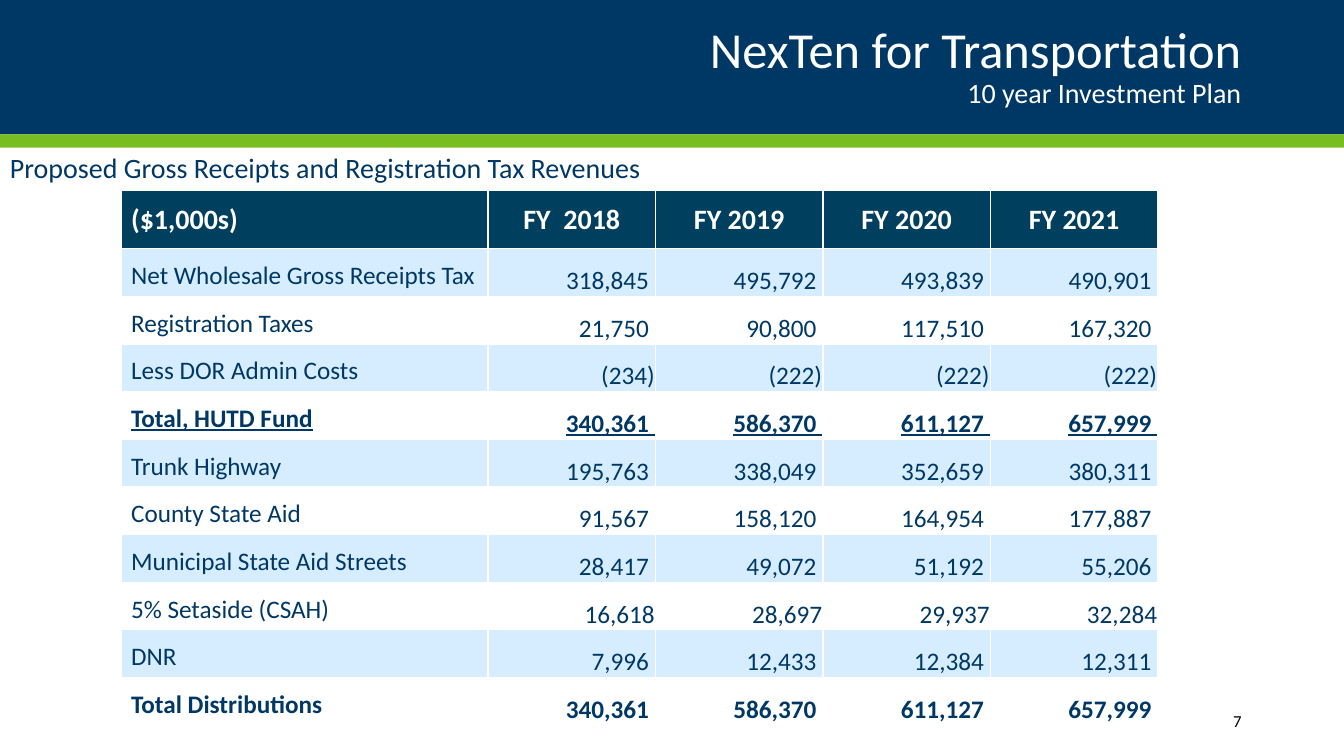
import pptx
import pptx.dml.color
import pptx.enum.shapes
import pptx.enum.text
import pptx.oxml.ns
import pptx.util
import lxml.etree

Cm = pptx.util.Cm
ALIGN = pptx.enum.text.PP_ALIGN
ANCHOR = pptx.enum.text.MSO_ANCHOR

COLORS = {
    "navy": "003865",
    "green": "78BE21",
    "header": "003F5E",
    "band": "D6EDFF",
    "white": "FFFFFF",
    "black": "000000",
}

HEADER = ["($1,000s)", "FY  2018", "FY 2019", "FY 2020", "FY 2021"]
# The trailing space lines positive amounts up with those in parentheses
REVENUES = [
    ["Net Wholesale Gross Receipts Tax", "318,845 ", "495,792 ", "493,839 ", "490,901 "],
    ["Registration Taxes", "21,750 ", "90,800 ", "117,510 ", "167,320 "],
    ["Less DOR Admin Costs", "(234)", "(222)", "(222)", "(222)"],
    ["Total, HUTD Fund", "340,361 ", "586,370 ", "611,127 ", "657,999 "],
    ["Trunk Highway", "195,763 ", "338,049 ", "352,659 ", "380,311 "],
    ["County State Aid", "91,567 ", "158,120 ", "164,954 ", "177,887 "],
    ["Municipal State Aid Streets", "28,417 ", "49,072 ", "51,192 ", "55,206 "],
    ["5% Setaside (CSAH)", "16,618", "28,697", "29,937", "32,284"],
    ["DNR", "7,996 ", "12,433 ", "12,384 ", "12,311 "],
    ["Total Distributions", "340,361 ", "586,370 ", "611,127 ", "657,999 "],
]


class SlideBuilder:
    """Holds the style and the current slide."""

    font = "Calibri"

    def __init__(self, page):
        self.page = page

    def color(self, name):
        return pptx.dml.color.RGBColor.from_string(COLORS[name])

    def format_run(self, span, size, color, bold=False, underline=False):
        span.font.name = self.font
        span.font.size = pptx.util.Pt(size)
        span.font.color.rgb = self.color(color)
        span.font.bold = bold
        span.font.underline = underline

    def bar(self, top, height, color):
        shape = self.page.shapes.add_shape(
            pptx.enum.shapes.MSO_SHAPE.RECTANGLE, 0, Cm(top), Cm(33.87), Cm(height))
        shape.fill.solid()
        shape.fill.fore_color.rgb = self.color(color)
        shape.line.fill.background()
        shape.shadow.inherit = False

    def title(self, left, top, width, height, heading, subheading):
        box = self.page.shapes.title
        box.left, box.top, box.width, box.height = map(Cm, (left, top, width, height))
        frame = box.text_frame
        frame.text = heading + "\v" + subheading
        frame.auto_size = pptx.enum.text.MSO_AUTO_SIZE.NONE
        frame.vertical_anchor = ANCHOR.MIDDLE
        para = frame.paragraphs[0]
        para.alignment = ALIGN.RIGHT
        para.line_spacing = 0.9
        for span, size in zip(para.runs, (36, 20)):
            self.format_run(span, size, "white")
        # The line break takes the size of the heading
        line_break = box.element.find(".//" + pptx.oxml.ns.qn("a:br"))
        lxml.etree.SubElement(line_break, pptx.oxml.ns.qn("a:rPr"), sz="3600")

    def text(self, left, top, width, height, words, size, color,
             align=ALIGN.LEFT, anchor=ANCHOR.TOP):
        box = self.page.shapes.add_textbox(Cm(left), Cm(top), Cm(width), Cm(height))
        frame = box.text_frame
        frame.word_wrap = True
        frame.vertical_anchor = anchor
        frame.text = words
        para = frame.paragraphs[0]
        para.alignment = align
        self.format_run(para.runs[0], size, color)

    def cell(self, cell, words, fill, align, anchor, **font):
        cell.text = words
        cell.vertical_anchor = anchor
        if fill:
            cell.fill.solid()
            cell.fill.fore_color.rgb = self.color(fill)
        else:
            cell.fill.background()
        para = cell.text_frame.paragraphs[0]
        para.alignment = align
        self.format_run(para.runs[0], **font)

    def table(self, left, top, widths, header_height, row_height, header, rows):
        height = header_height + row_height * len(rows)
        grid = self.page.shapes.add_table(
            len(rows) + 1, len(header), Cm(left), Cm(top), Cm(sum(widths)), Cm(height)).table
        for column, width in zip(grid.columns, widths):
            column.width = Cm(width)
        for index, row in enumerate(grid.rows):
            row.height = Cm(row_height if index else header_height)

        # Header row
        for column, words in enumerate(header):
            self.cell(grid.cell(0, column), words, "header",
                      ALIGN.CENTER if column else ALIGN.LEFT, ANCHOR.MIDDLE,
                      size=20, color="white", bold=True)

        # Banded rows, with totals in bold
        for index, row in enumerate(rows, start=1):
            for column, words in enumerate(row):
                cell = grid.cell(index, column)
                self.cell(cell, words, "band" if index % 2 else None,
                          ALIGN.RIGHT if column else ALIGN.LEFT, ANCHOR.BOTTOM,
                          size=18, color="navy", bold=row[0].startswith("Total"),
                          underline=row[0] == "Total, HUTD Fund")
                if column:
                    cell.margin_left = cell.margin_right = cell.margin_top = Cm(0.02)
                    cell.margin_bottom = 0


def main():
    deck = pptx.Presentation()
    deck.slide_width, deck.slide_height = Cm(33.87), Cm(19.05)
    builder = SlideBuilder(deck.slides.add_slide(deck.slide_layouts[5]))

    # Banner; the title is moved in front of its bars
    builder.bar(0, 3.39, "navy")
    builder.bar(3.39, 0.33, "green")
    builder.title(2.33, 0.43, 29.21, 2.54, "NexTen for Transportation", "10 year Investment Plan")
    builder.page.shapes.element.append(builder.page.shapes.title.element)

    # Page number
    builder.text(27.48, 17.65, 4.06, 1.02, "7", 12, "black", ALIGN.RIGHT, ANCHOR.MIDDLE)

    # Revenue table and its caption
    builder.table(3.05, 4.8, [9.25] + [4.22] * 4, 1.47, 1.2, HEADER, REVENUES)
    builder.text(0, 3.68, 25.07, 1.12,
                 "Proposed Gross Receipts and Registration Tax Revenues", 20, "navy")

    deck.save("out.pptx")


if __name__ == "__main__":
    main()
